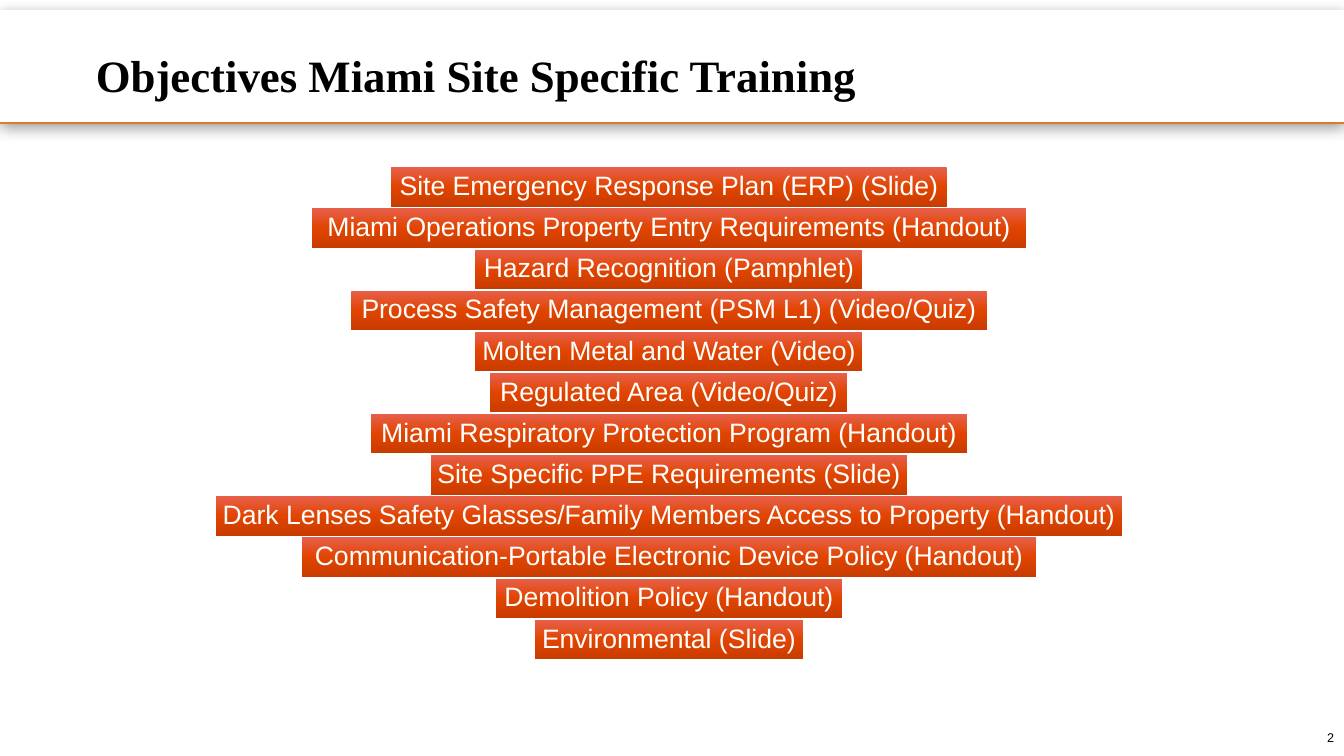
from copy import deepcopy

from lxml import etree
from pptx import Presentation
from pptx import util as u
from pptx.dml import color
from pptx.enum import shapes, text
from pptx.oxml import ns

CENTER, FIRST_TOP, PITCH, BAR_HEIGHT = 6.635, 1.66, 0.408, 0.39
OBJECTIVES = [
    ("Site Emergency Response Plan (ERP) (Slide)", 5.51),
    ("Miami Operations Property Entry Requirements (Handout)", 7.09),
    ("Hazard Recognition (Pamphlet)", 3.84),
    ("Process Safety Management (PSM L1) (Video/Quiz)", 6.3),
    ("Molten Metal and Water (Video)", 3.84),
    ("Regulated Area (Video/Quiz)", 3.54),
    ("Miami Respiratory Protection Program (Handout)", 5.91),
    ("Site Specific PPE Requirements (Slide)", 4.72),
    ("Dark Lenses Safety Glasses/Family Members Access to Property (Handout)", 8.99),
    ("Communication-Portable Electronic Device Policy (Handout)", 7.28),
    ("Demolition Policy (Handout)", 3.44),
    ("Environmental (Slide)", 2.66),
]


def rgb(value):
    return color.RGBColor.from_string(value)


def inches(*lengths):
    return [u.Inches(length) for length in lengths]


def assign(target, values):
    for name, value in values.items():
        setattr(target, name, value)


class ObjectivesPage:
    """Hold the style and the current slide, and draw each kind of element."""

    gradient = [(0, "E7604B"), (0.5, "E14400"), (1, "C83C00")]
    margins = ("margin_left", "margin_top", "margin_right", "margin_bottom")

    def __init__(self, deck):
        self.page = deck.slides.add_slide(deck.slide_layouts[5])

    def put_text(self, box, words, font, ink, frame, layout):
        assign(box.text_frame, frame)
        para = box.text_frame.paragraphs[0]
        assign(para, layout)
        span = para.add_run()
        span.text = words
        assign(span.font, font)
        span.font.color.rgb = rgb(ink)

    def rectangle(self, *place):
        box = self.page.shapes.add_shape(shapes.MSO_SHAPE.RECTANGLE, *inches(*place))
        box.line.fill.background()
        box.shadow.inherit = False
        return box

    def header_band(self, *place):
        band = self.rectangle(*place)
        band.fill.solid()
        band.fill.fore_color.rgb = rgb("FFFFFF")
        effects = band.element.spPr.find(ns.qn("a:effectLst"))
        shadow = etree.SubElement(effects, ns.qn("a:outerShdw"), blurRad=str(u.Pt(10.9)),
                                  dist=str(u.Pt(3)), dir="5400000", algn="t", rotWithShape="0")
        tone = etree.SubElement(shadow, ns.qn("a:srgbClr"), val="000000")
        etree.SubElement(tone, ns.qn("a:alpha"), val="40000")
        self.page.shapes.title.element.addprevious(band.element)

    def rule(self, *ends):
        line = self.page.shapes.add_connector(shapes.MSO_CONNECTOR.STRAIGHT, *inches(*ends))
        line.line.color.rgb = rgb("DA7C2D")
        line.line.width = u.Pt(2)
        etree.SubElement(line.element.spPr, ns.qn("a:effectLst"))
        self.page.shapes.title.element.addprevious(line.element)

    def title(self, words, *place):
        box = self.page.shapes.title
        assign(box, dict(zip(("left", "top", "width", "height"), inches(*place))))
        self.put_text(box, words, {"name": "Times New Roman", "size": u.Pt(32), "bold": True},
                      "000000", {"vertical_anchor": text.MSO_ANCHOR.MIDDLE, "word_wrap": True,
                                 "auto_size": text.MSO_AUTO_SIZE.NONE},
                      {"alignment": text.PP_ALIGN.LEFT, "line_spacing": 0.85})

    def bar(self, words, *place):
        box = self.rectangle(*place)
        box.fill.gradient()
        box.fill.gradient_angle = 270
        stops = box.element.spPr.find(".//" + ns.qn("a:gsLst"))
        stops.append(deepcopy(stops[0]))
        for stop, (position, shade) in zip(box.fill.gradient_stops, self.gradient):
            stop.position = position
            stop.color.rgb = rgb(shade)
        frame = dict.fromkeys(self.margins, u.Inches(0.05))
        frame.update(vertical_anchor=text.MSO_ANCHOR.MIDDLE, word_wrap=False)
        self.put_text(box, words, {"name": "Arial", "size": u.Pt(19)}, "FFFFFF", frame,
                      {"alignment": text.PP_ALIGN.CENTER, "line_spacing": 0.9})

    def page_number(self, words, *place):
        box = self.page.shapes.add_textbox(*inches(*place))
        self.put_text(box, words, {"name": "Arial", "size": u.Pt(9)}, "000000",
                      {"word_wrap": True}, {"alignment": text.PP_ALIGN.RIGHT})


def main():
    deck = Presentation()
    deck.slide_width, deck.slide_height = inches(13.33, 7.5)
    sheet = ObjectivesPage(deck)
    sheet.header_band(0, 0.1, 13.33, 1.11)
    sheet.rule(0, 1.22, 13.33, 1.22)
    sheet.title("Objectives Miami Site Specific Training", 0.85, 0.45, 10.59, 0.66)
    for row, (words, width) in enumerate(OBJECTIVES):
        sheet.bar(words, CENTER - width / 2, FIRST_TOP + row * PITCH, width, BAR_HEIGHT)
    sheet.page_number("2", 12.02, 7.19, 1.31, 0.31)
    deck.save("out.pptx")


if __name__ == "__main__":
    main()
